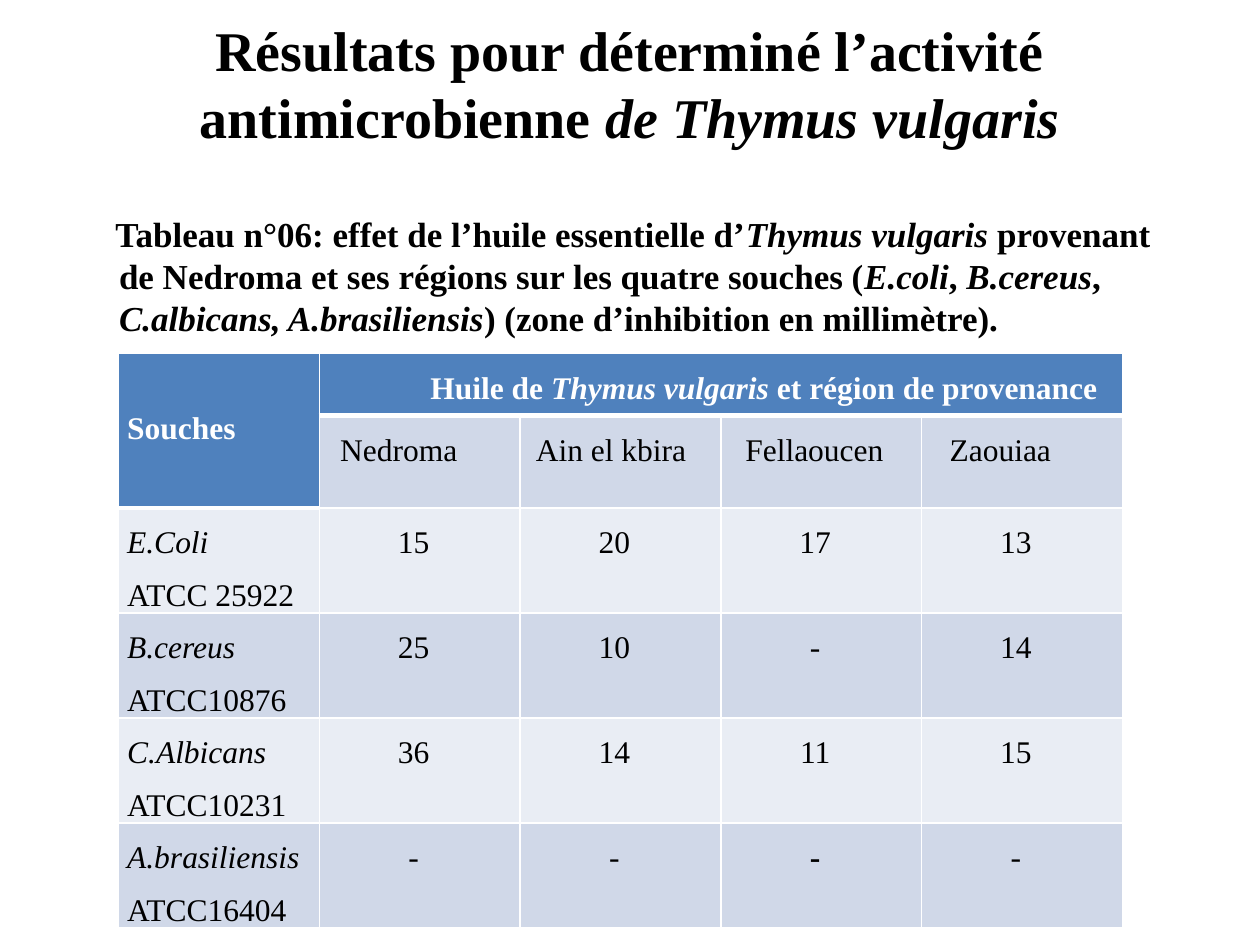
from lxml import etree
from pptx import Presentation
from pptx.dml.color import RGBColor
from pptx.enum.text import MSO_ANCHOR, PP_ALIGN
from pptx.oxml.ns import qn
from pptx.util import Pt

LEFT, CENTER = PP_ALIGN.LEFT, PP_ALIGN.CENTER
TOP, MIDDLE = MSO_ANCHOR.TOP, MSO_ANCHOR.MIDDLE

BLACK = RGBColor(0x00, 0x00, 0x00)
WHITE = RGBColor(0xFF, 0xFF, 0xFF)
HEADER_BLUE = RGBColor(0x4F, 0x81, 0xBD)
BAND_DARK = RGBColor(0xD0, 0xD8, 0xE8)
BAND_LIGHT = RGBColor(0xE9, 0xED, 0xF4)
FONT = "Times New Roman"

# Text pieces are (text, italic) pairs
TITLE = [("Résultats pour déterminé l’activité antimicrobienne ", False),
         ("de Thymus vulgaris", True)]
CAPTION = [("Tableau n°06: effet de l’huile essentielle d’", False),
           ("Thymus vulgaris ", True),
           ("provenant de Nedroma et ses régions sur les quatre souches (", False),
           ("E.coli", True), (", ", False), ("B.cereus", True), (", ", False),
           ("C.albicans, A.brasiliensis", True),
           (") (zone d’inhibition en millimètre).", False)]
OIL_HEADER = [("Huile de ", False), ("Thymus vulgaris ", True),
              ("et région de provenance", False)]
# Each region with its left inset
REGIONS = [("Nedroma", 12), ("Ain el kbira", 9), ("Fellaoucen", 14), ("Zaouiaa", 16)]
STRAINS = [("E.Coli", "ATCC 25922", ["15", "20", "17", "13"]),
           ("B.cereus", "ATCC10876", ["25", "10", "-", "14"]),
           ("C.Albicans", "ATCC10231", ["36", "14", "11", "15"]),
           ("A.brasiliensis", "ATCC16404", ["-", "-", "-", "-"])]
BOLD_VALUE = ("A.brasiliensis", 3)
# A strain row holds exactly two lines of text
CELL_LINE = 30
ROW_HEIGHTS = [35.4, 53] + [2 * CELL_LINE] * len(STRAINS)


def add_run(paragraph, text, size, color=BLACK, bold=False, italic=False):
    run = paragraph.add_run()
    run.text = text
    font = run.font
    font.name, font.size, font.bold, font.italic = FONT, Pt(size), bold, italic
    font.color.rgb = color


def add_bold_text(slide, box, pieces, size, line_height, align):
    frame = slide.shapes.add_textbox(*map(Pt, box)).text_frame
    frame.word_wrap = True
    frame.margin_left = frame.margin_right = frame.margin_top = frame.margin_bottom = 0
    paragraph = frame.paragraphs[0]
    paragraph.alignment = align
    paragraph.line_spacing = Pt(line_height)
    for text, italic in pieces:
        add_run(paragraph, text, size, bold=True, italic=italic)
    return paragraph


def add_title(slide, box):
    add_bold_text(slide, box, TITLE, 32, 38.3, CENTER)


def add_caption(slide, box):
    paragraph = add_bold_text(slide, box, CAPTION, 20, 24, LEFT)
    properties = paragraph._p.get_or_add_pPr()
    properties.set("marL", str(Pt(2)))
    properties.set("indent", str(-Pt(2)))


def style_cell(cell, fill, bottom=1):
    """White borders, then the fill."""
    properties = cell._tc.get_or_add_tcPr()
    for side, width in (("L", 1), ("R", 1), ("T", 1), ("B", bottom)):
        line = etree.SubElement(properties, qn(f"a:ln{side}"), w=str(Pt(width)))
        solid = etree.SubElement(line, qn("a:solidFill"))
        etree.SubElement(solid, qn("a:srgbClr"), val=str(WHITE))
    cell.fill.solid()
    cell.fill.fore_color.rgb = fill


def start_cell(cell, left=5, right=5, align=LEFT, anchor=TOP, line_height=CELL_LINE):
    cell.margin_left, cell.margin_right = Pt(left), Pt(right)
    cell.margin_top = cell.margin_bottom = 0
    cell.vertical_anchor = anchor
    paragraph = cell.text_frame.paragraphs[0]
    paragraph.alignment = align
    paragraph.line_spacing = Pt(line_height)
    return paragraph


def add_results_table(slide, box):
    rows, columns = len(ROW_HEIGHTS), len(REGIONS) + 1
    table = slide.shapes.add_table(rows, columns, *map(Pt, box)).table
    for column in table.columns:
        column.width = Pt(box[2] / columns)
    for row, height in zip(table.rows, ROW_HEIGHTS):
        row.height = Pt(height)

    # Fills and borders
    for r in range(rows):
        for c in range(columns):
            header = r == 0 or (r == 1 and c == 0)
            band = BAND_DARK if r % 2 else BAND_LIGHT
            style_cell(table.cell(r, c), HEADER_BLUE if header else band,
                       bottom=3 if header else 1)

    # Header rows
    strain_head, oil_head = table.cell(0, 0), table.cell(0, 1)
    strain_head.merge(table.cell(1, 0))
    oil_head.merge(table.cell(0, columns - 1))
    add_run(start_cell(strain_head, anchor=MIDDLE, line_height=18),
            "Souches", 18, WHITE, bold=True)
    paragraph = start_cell(oil_head, left=63.5)
    for text, italic in OIL_HEADER:
        add_run(paragraph, text, 18, WHITE, bold=True, italic=italic)
    for c, (region, inset) in enumerate(REGIONS, 1):
        add_run(start_cell(table.cell(1, c), left=inset), region, 18)

    # One row per strain
    for r, (strain, reference, zones) in enumerate(STRAINS, 2):
        paragraph = start_cell(table.cell(r, 0))
        add_run(paragraph, strain, 18, italic=True)
        paragraph.add_line_break()
        add_run(paragraph, reference, 18)
        for c, zone in enumerate(zones, 1):
            paragraph = start_cell(table.cell(r, c), right=12, align=CENTER)
            add_run(paragraph, zone, 18, bold=(strain, c) == BOLD_VALUE)


def main():
    presentation = Presentation()
    presentation.slide_width, presentation.slide_height = Pt(720), Pt(540)
    slide = presentation.slides.add_slide(presentation.slide_layouts[6])
    add_title(slide, (36, 9.2, 648, 77))
    add_caption(slide, (66, 121.5, 608, 72))
    add_results_table(slide, (67.7, 202, 573.8, sum(ROW_HEIGHTS)))
    presentation.save("out.pptx")


if __name__ == "__main__":
    main()
